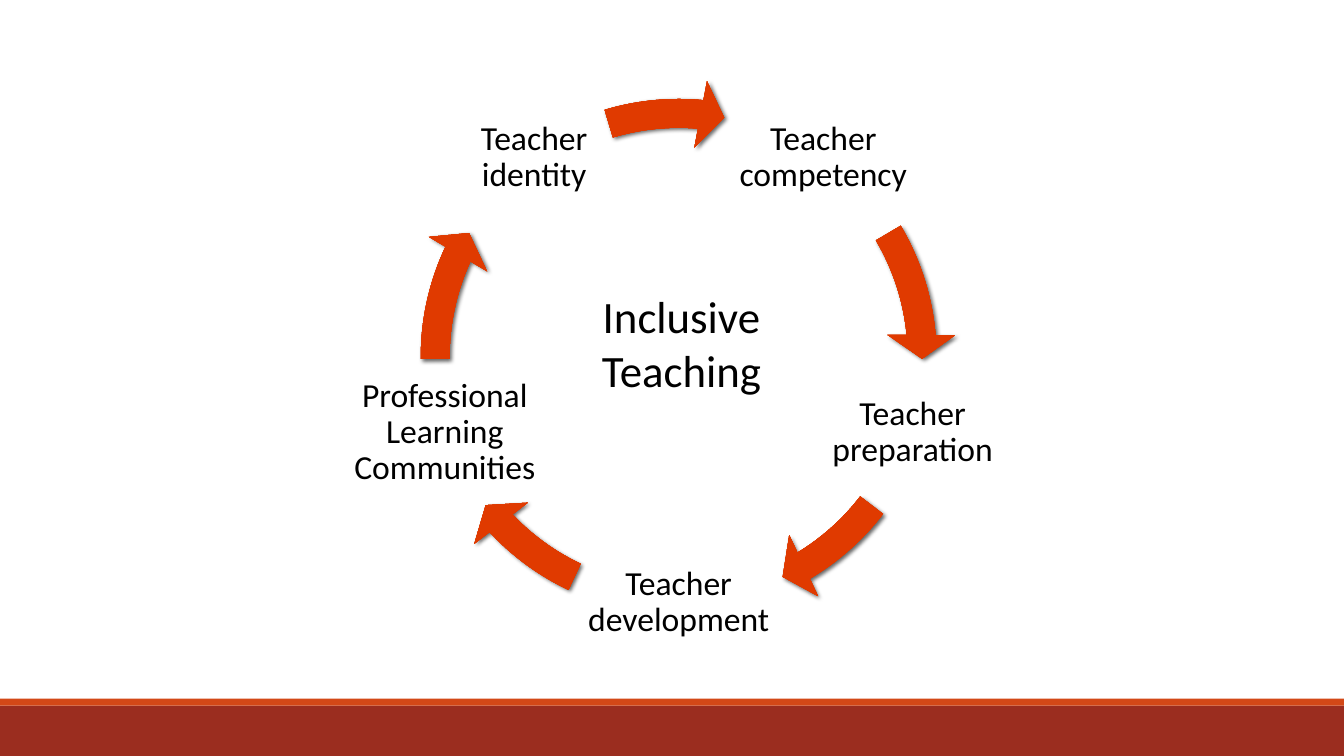
from dataclasses import dataclass
from math import cos, radians, sin

from lxml import etree
from pptx import Presentation
from pptx import util as u
from pptx.dml.color import RGBColor
from pptx.enum import shapes, text
from pptx.oxml import parse_xml
from pptx.oxml.ns import nsdecls, qn


@dataclass(frozen=True)
class Theme:
    """Colours, font and type sizes of the slide."""
    font: str = "Calibri"
    ink: str = "000000"
    band: str = "9B2D1F"
    stripe: str = "D34817"
    arrow: tuple = ((0, "DA3900"), (34, "DC3900"), (70, "E03A00"), (100, "DC440E"))
    label: int = 24
    hub: int = 32


THEME = Theme()
WIDTH, HEIGHT = u.Inches(13.33), u.Inches(7.5)
CENTRE_COL, CENTRE_ROW = 50.5, 47.2
RADIUS, RING = 18.3, 41.26
LABEL_ROWS = 19.6
STEPS = (
    ("Teacher competency", 14.63, 329.44, 354.88),
    ("Teacher preparation", 14.1, 37.56, 59.1),
    ("Teacher development", 15.68, 115.3, 136.84),
    ("Professional Learning Communities", 15.98, 179.52, 204.96),
    ("Teacher identity", 11.03, 253.31, 275.19),
)


def col(n):
    """Return the length of n columns out of 100."""
    return round(WIDTH * n / 100)


def row(n):
    """Return the length of n rows out of 100."""
    return round(HEIGHT * n / 100)


def add_bar(s, top, rows, color):
    """Add a full-width plain bar."""
    sp = s.shapes.add_shape(shapes.MSO_SHAPE.RECTANGLE, 0, row(top), WIDTH, row(rows))
    sp.shadow.inherit = False
    sp.fill.solid()
    sp.fill.fore_color.rgb = RGBColor.from_string(color)
    sp.line.fill.background()


def add_text(s, box, words, size):
    """Add a centred, wrapped text box and return its text frame."""
    tf = s.shapes.add_textbox(*box).text_frame
    tf.word_wrap = True
    tf.vertical_anchor = text.MSO_ANCHOR.MIDDLE
    p = tf.paragraphs[0]
    p.alignment = text.PP_ALIGN.CENTER
    r = p.add_run()
    r.text = words
    r.font.name = THEME.font
    r.font.size = u.Pt(size)
    r.font.color.rgb = RGBColor.from_string(THEME.ink)
    return tf


def add_label(s, words, cols, angle):
    """Add a step label centred on the circle at an angle in degrees."""
    x = col(CENTRE_COL) + col(RADIUS) * cos(radians(angle))
    y = row(CENTRE_ROW) + col(RADIUS) * sin(radians(angle))
    w, h = col(cols), row(LABEL_ROWS)
    tf = add_text(s, (round(x - w / 2), round(y - h / 2), w, h), words, THEME.label)
    tf.margin_left = tf.margin_right = tf.margin_top = tf.margin_bottom = u.Inches(0.03)
    tf.paragraphs[0].line_spacing = 0.9


def add_arrow(s, start, end):
    """Add a curved arrow on the ring between two angles in degrees."""
    d = col(RING)
    sp = s.shapes.add_shape(shapes.MSO_SHAPE.CIRCULAR_ARROW, col(CENTRE_COL) - d // 2,
                            row(CENTRE_ROW) - d // 2, d, d)
    for i, value in enumerate((0.052, 3.36, end * 0.6, start * 0.6, 0.061)):
        sp.adjustments[i] = value
    sp.line.fill.background()
    sp.shadow.inherit = False
    paint_arrow(sp)


def paint_arrow(sp):
    """Give an arrow its radial gradient and soft shadow."""
    stops = "".join(f'<a:gs pos="{pos * 1000}"><a:srgbClr val="{color}"/></a:gs>'
                    for pos, color in THEME.arrow)
    gradient = parse_xml(
        f'<a:gradFill {nsdecls("a")} rotWithShape="1"><a:gsLst>{stops}</a:gsLst>'
        '<a:path path="circle"><a:fillToRect l="100000" t="100000" r="100000" b="100000"/>'
        '</a:path></a:gradFill>')
    props = sp.fill._xPr
    props.find(qn("a:ln")).addprevious(gradient)
    shadow = etree.SubElement(props.find(qn("a:effectLst")), qn("a:outerShdw"),
                              blurRad=str(u.Pt(3)), dist=str(u.Pt(2)),
                              dir=str(45 * 60000), rotWithShape="0")
    color = etree.SubElement(shadow, qn("a:srgbClr"), val=THEME.ink)
    etree.SubElement(color, qn("a:alpha"), val="60000")


def main():
    """Build the inclusive teaching cycle and save it."""
    prs = Presentation()
    prs.slide_width, prs.slide_height = WIDTH, HEIGHT
    s = prs.slides.add_slide(prs.slide_layouts[6])
    add_bar(s, 93.33, 6.67, THEME.band)
    add_bar(s, 92.4, 0.93, THEME.stripe)
    for i, (words, cols, start, end) in enumerate(STEPS):
        add_label(s, words, cols, -54 + i * 360 / len(STEPS))
        add_arrow(s, start, end)
    hub = (col(43.29), row(37.47), col(14.85), row(15.73))
    tf = add_text(s, hub, "Inclusive Teaching", THEME.hub)
    tf.auto_size = text.MSO_AUTO_SIZE.SHAPE_TO_FIT_TEXT
    prs.save("out.pptx")


if __name__ == "__main__":
    main()
